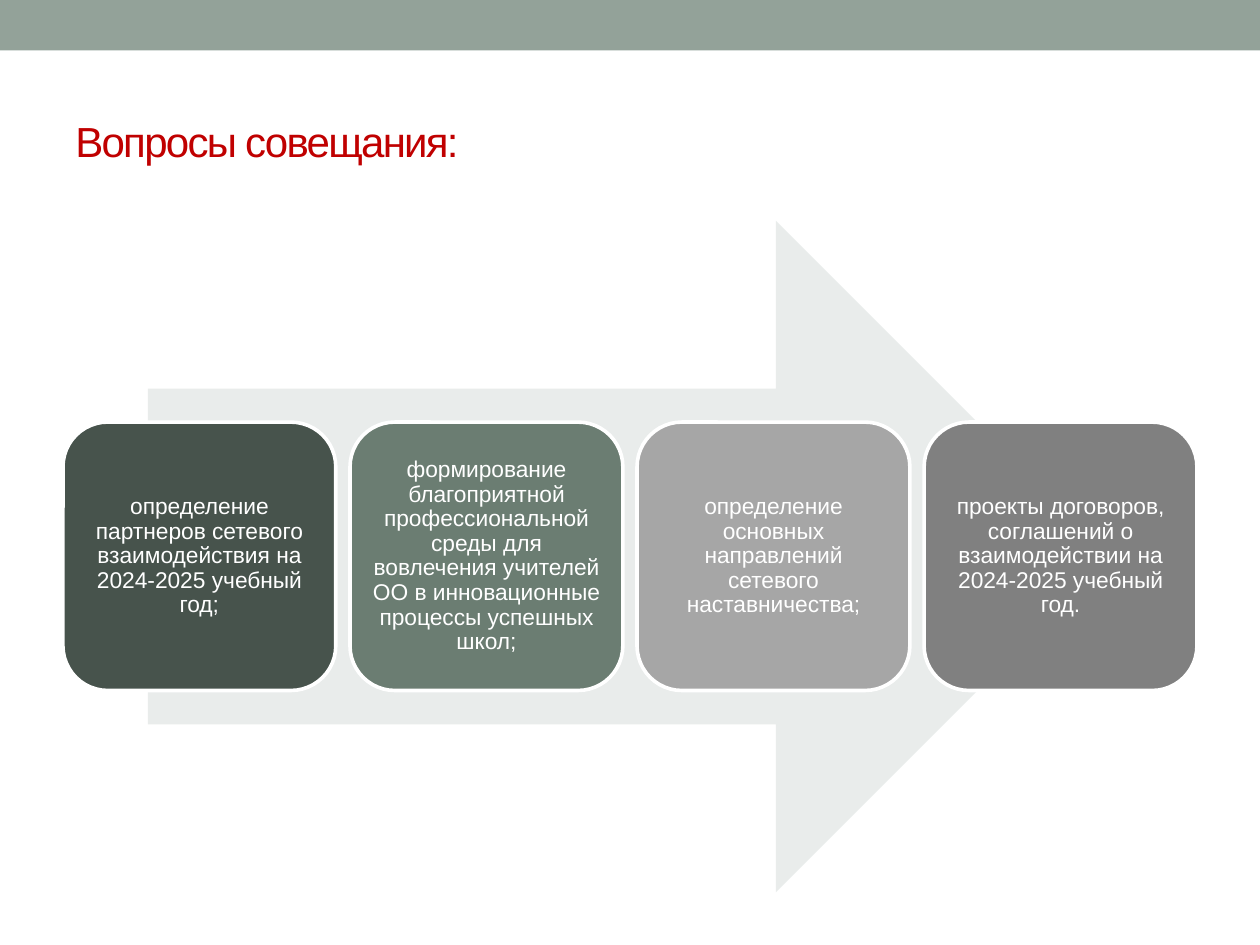
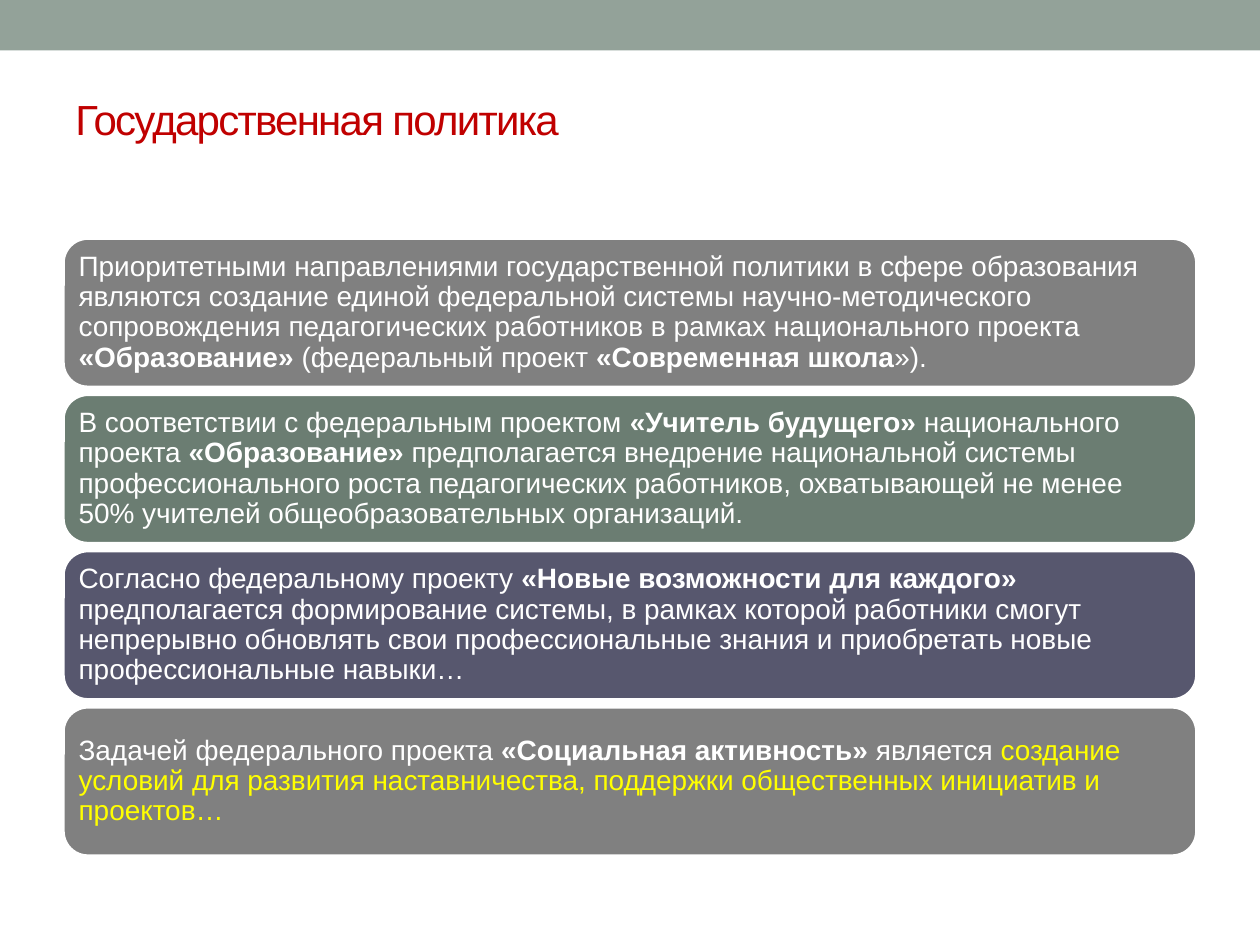
from dataclasses import dataclass

from pptx import Presentation
from pptx.dml.color import RGBColor
from pptx.enum.shapes import MSO_SHAPE
from pptx.enum.text import MSO_ANCHOR, PP_ALIGN
from pptx.util import Cm, Pt

WIDE, HIGH = 25.4, 19.05
EDGE = 1.27
SPAN = WIDE - 2 * EDGE
FONT = "Arial"
WHITE, RED, YELLOW = "FFFFFF", "C00000", "FFFF00"
SAGE, MIST, GREEN, DARK = "93A299", "E9ECEB", "6B7D72", "47534C"
SILVER, GRAY, SLATE = "A6A6A6", "808080", "57576E"


@dataclass
class Bit:
    text: str
    bold: bool = False
    color: str = WHITE


@dataclass
class Box:
    left: float
    top: float
    width: float
    height: float

    def lengths(self) -> list:
        return [Cm(v) for v in (self.left, self.top, self.width, self.height)]


@dataclass
class Panel:
    fill: str
    bits: list


def hue(code: str) -> RGBColor:
    return RGBColor.from_string(code)


def write(shape, bits: list, *, size: float, align=PP_ALIGN.LEFT,
          inset=None, line=None, track: int = 0) -> None:
    """Fill a shape with one paragraph of formatted bits."""
    frame = shape.text_frame
    frame.word_wrap = True
    frame.vertical_anchor = MSO_ANCHOR.MIDDLE
    if inset is not None:
        frame.margin_left = frame.margin_right = Cm(inset)
        frame.margin_top = frame.margin_bottom = Cm(inset)
    para = frame.paragraphs[0]
    para.alignment = align
    para.line_spacing = line
    for bit in bits:
        run = para.add_run()
        run.text = bit.text
        font = run.font
        font.name, font.size, font.bold = FONT, Pt(size), bit.bold
        font.color.rgb = hue(bit.color)
        if track:
            run._r.get_or_add_rPr().set("spc", str(track))


def draw(slide, kind, box: Box, fill: str, edge: str = ""):
    shape = slide.shapes.add_shape(kind, *box.lengths())
    shape.shadow.inherit = False
    shape.fill.solid()
    shape.fill.fore_color.rgb = hue(fill)
    if edge:
        shape.line.color.rgb = hue(edge)
        shape.line.width = Pt(2.08)
    else:
        shape.line.fill.background()
    return shape


def start(deck, title: str, height: float):
    """Add a slide with the top band and the title."""
    slide = deck.slides.add_slide(deck.slide_layouts[6])
    draw(slide, MSO_SHAPE.RECTANGLE, Box(0, 0, WIDE, 1.02), SAGE)
    label = slide.shapes.add_textbox(*Box(EDGE, 1.47, SPAN, height).lengths())
    write(label, [Bit(title, color=RED)], size=24, track=-100)
    return slide


def place(slide, panels: list, first: Box, dx: float = 0, dy: float = 0,
          **style) -> None:
    """Draw rounded panels at equal steps."""
    for i, panel in enumerate(panels):
        box = Box(first.left + i * dx, first.top + i * dy,
                  first.width, first.height)
        shape = draw(slide, MSO_SHAPE.ROUNDED_RECTANGLE, box, panel.fill, WHITE)
        write(shape, panel.bits, line=0.9, **style)


TOPICS = [
    Panel(DARK, [Bit("определение партнеров сетевого взаимодействия на "
                     "2024-2025 учебный год;")]),
    Panel(GREEN, [Bit("формирование благоприятной профессиональной среды для "
                      "вовлечения учителей ОО в инновационные процессы "
                      "успешных школ;")]),
    Panel(SILVER, [Bit("определение основных направлений сетевого "
                       "наставничества;")]),
    Panel(GRAY, [Bit("проекты договоров, соглашений о взаимодействии на "
                     "2024-2025 учебный год.")]),
]

GOALS = [
    Panel(GRAY, [
        Bit("Приоритетными направлениями государственной политики в сфере "
            "образования являются создание единой федеральной системы "
            "научно-методического сопровождения педагогических работников "
            "в рамках национального проекта "),
        Bit("«Образование» ", bold=True),
        Bit("(федеральный проект "),
        Bit("«Современная школа", bold=True),
        Bit("»).")]),
    Panel(GREEN, [
        Bit("В соответствии с федеральным проектом "),
        Bit("«Учитель будущего» ", bold=True),
        Bit("национального проекта "),
        Bit("«Образование» ", bold=True),
        Bit("предполагается внедрение национальной системы "
            "профессионального роста педагогических работников, "
            "охватывающей не менее 50% учителей общеобразовательных "
            "организаций.")]),
    Panel(SLATE, [
        Bit("Согласно федеральному проекту "),
        Bit("«Новые возможности для каждого» ", bold=True),
        Bit("предполагается формирование системы, в рамках которой работники "
            "смогут непрерывно обновлять свои профессиональные знания и "
            "приобретать новые профессиональные навыки…")]),
    Panel(GRAY, [
        Bit("Задачей федерального проекта "),
        Bit("«Социальная активность» ", bold=True),
        Bit("является "),
        Bit("создание условий для развития наставничества, поддержки "
            "общественных инициатив и проектов…", color=YELLOW)]),
]


def main() -> None:
    deck = Presentation()
    deck.slide_width, deck.slide_height = Cm(WIDE), Cm(HIGH)

    # Meeting topics: cards across an arrow
    slide = start(deck, "Вопросы совещания:", 2.74)
    draw(slide, MSO_SHAPE.RIGHT_ARROW, Box(2.98, 4.45, 19.43, 13.54), MIST)
    card = Box(EDGE, 8.51, 5.5, 5.41)
    step = (SPAN - card.width) / (len(TOPICS) - 1)
    place(slide, TOPICS, card, dx=step, size=13, inset=0.13,
          align=PP_ALIGN.CENTER)

    # State policy: stacked rows
    slide = start(deck, "Государственная политика", 1.85)
    row = Box(EDGE, 4.8, SPAN, 3.01)
    place(slide, GOALS, row, dy=3.15, size=16, inset=0.17)

    deck.save("out.pptx")


if __name__ == "__main__":
    main()
